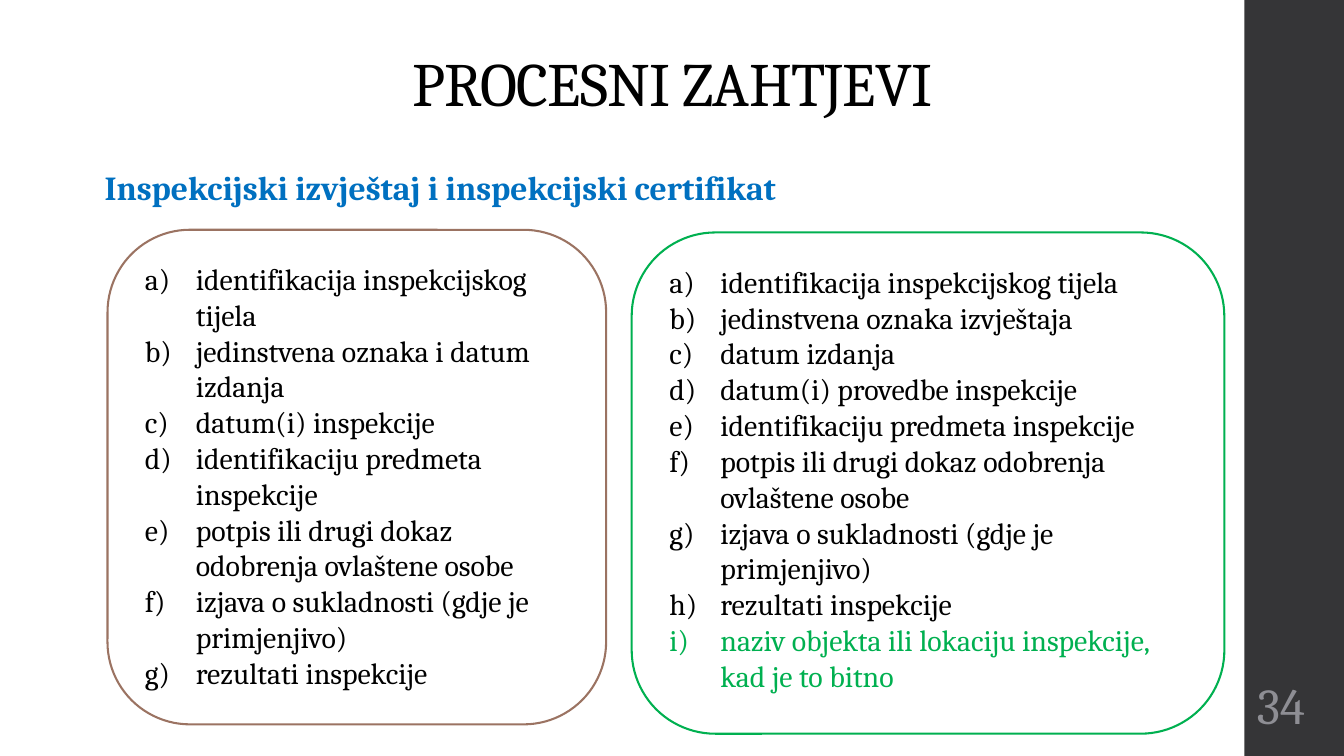
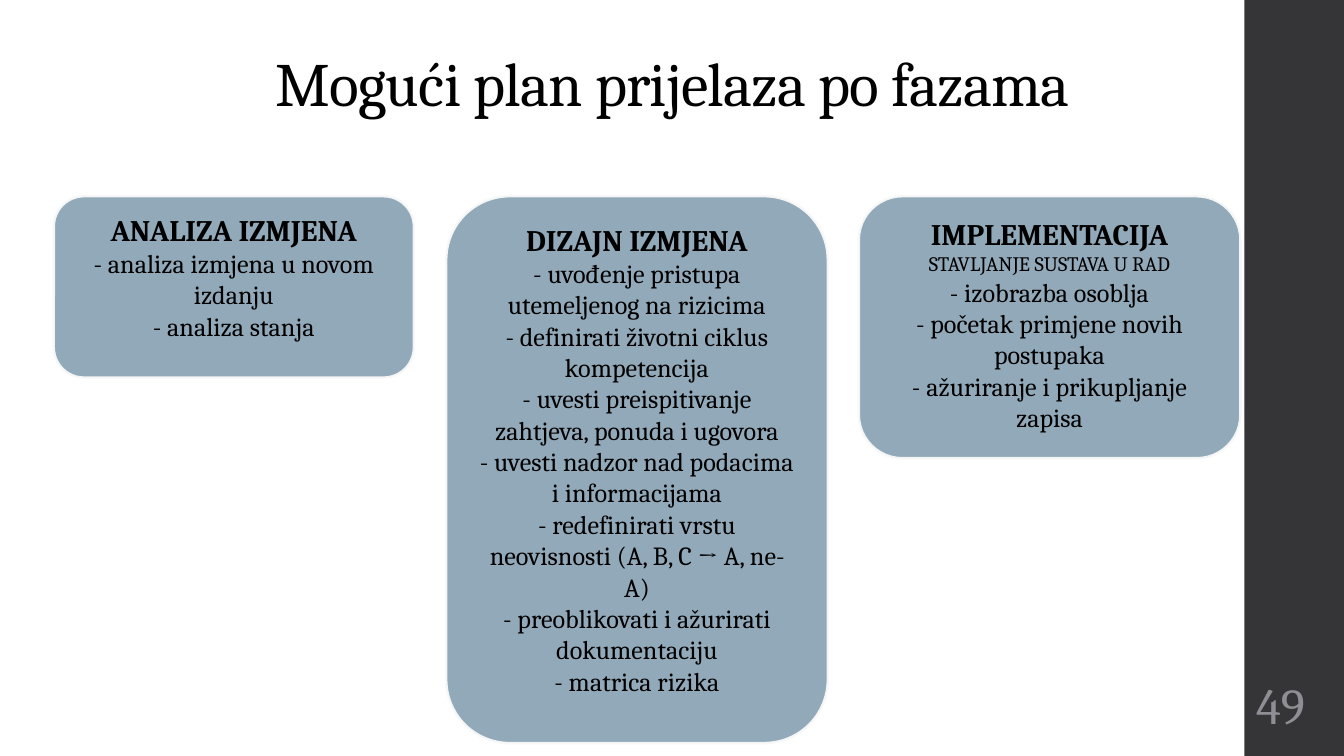
from dataclasses import dataclass

import lxml.etree
import pptx
import pptx.dml.color
import pptx.enum.shapes
import pptx.enum.text
import pptx.oxml.ns
import pptx.util

Inches = pptx.util.Inches
Pt = pptx.util.Pt
Align = pptx.enum.text.PP_ALIGN
Anchor = pptx.enum.text.MSO_ANCHOR
Preset = pptx.enum.shapes.MSO_SHAPE

FONT = "Cambria"
COLORS = {
    "white": "FFFFFF",
    "black": "000000",
    "band": "353537",
    "number": "8E8E94",
    "heading": "0070C0",
    "brown": "9B7362",
    "green": "00B050",
    "card": "92A9B9",
    "card_edge": "F9F9F9",
}


@dataclass(frozen=True)
class Line:
    text: str
    size: float
    color: str = "black"
    bold: bool = False


@dataclass(frozen=True)
class Box:
    left: float
    top: float
    width: float
    height: float


@dataclass(frozen=True)
class RequirementList:
    box: Box
    edge: str
    items: tuple[str, ...]
    added: tuple[str, ...] = ()


@dataclass(frozen=True)
class Phase:
    left: float
    width: float
    height: float
    title: str
    steps: tuple[str, ...]
    subtitle: str = ""


SLIDE_WIDTH = 10
SLIDE_HEIGHT = SLIDE_WIDTH * 9 / 16
TITLE = Box(1.14, 0.46, 7.73, 0.43)
BAND = Box(9.26, 0, 0.74, SLIDE_HEIGHT)
NUMBER = Box(9.11, 5.03, 0.6, 0.43)
HEADING = Box(0.68, 1.19, 7.73, 0.71)
PHASE_TOP = 1.46
LIST_INDENT = 0.38

REQUIREMENT_LISTS = (
    RequirementList(
        Box(0.8, 1.71, 3.71, 3.68),
        "brown",
        (
            "identifikacija inspekcijskog tijela",
            "jedinstvena oznaka i datum izdanja",
            "datum(i) inspekcije",
            "identifikaciju predmeta inspekcije",
            "potpis ili drugi dokaz odobrenja ovlaštene osobe",
            "izjava o sukladnosti (gdje je primjenjivo)",
            "rezultati inspekcije",
        ),
    ),
    RequirementList(
        Box(4.7, 1.73, 4.41, 3.73),
        "green",
        (
            "identifikacija inspekcijskog tijela",
            "jedinstvena oznaka izvještaja",
            "datum izdanja",
            "datum(i) provedbe inspekcije",
            "identifikaciju predmeta inspekcije",
            "potpis ili drugi dokaz odobrenja ovlaštene osobe",
            "izjava o sukladnosti (gdje je primjenjivo)",
            "rezultati inspekcije",
        ),
        ("naziv objekta ili lokaciju inspekcije, kad je to bitno",),
    ),
)

PHASES = (
    Phase(
        0.4, 2.68, 1.35,
        "ANALIZA IZMJENA",
        ("analiza izmjena u novom izdanju", "analiza stanja"),
    ),
    Phase(
        3.32, 2.84, 4.07,
        "DIZAJN IZMJENA",
        (
            "uvođenje pristupa utemeljenog na rizicima",
            "definirati životni ciklus kompetencija",
            "uvesti preispitivanje zahtjeva, ponuda i ugovora",
            "uvesti nadzor nad podacima i informacijama",
            "redefinirati vrstu neovisnosti (A, B, C → A, ne-A)",
            "preoblikovati i ažurirati dokumentaciju",
            "matrica rizika",
        ),
    ),
    Phase(
        6.39, 2.84, 1.95,
        "IMPLEMENTACIJA",
        (
            "izobrazba osoblja",
            "početak primjene novih postupaka",
            "ažuriranje i prikupljanje zapisa",
        ),
        "STAVLJANJE SUSTAVA U RAD",
    ),
)


def rgb(name: str) -> pptx.dml.color.RGBColor:
    return pptx.dml.color.RGBColor.from_string(COLORS[name])


def add_element(parent, tag: str, **attributes: str) -> None:
    lxml.etree.SubElement(parent, pptx.oxml.ns.qn(tag), **attributes)


def place(box: Box) -> tuple:
    return Inches(box.left), Inches(box.top), Inches(box.width), Inches(box.height)


def write_lines(shape, lines: list[Line], align: Align, anchor: Anchor = Anchor.TOP) -> None:
    frame = shape.text_frame
    frame.word_wrap = True
    frame.vertical_anchor = anchor
    frame.text = "\n".join(line.text for line in lines)
    for paragraph, line in zip(frame.paragraphs, lines):
        paragraph.alignment = align
        font = paragraph.runs[0].font
        font.name = FONT
        font.size = Pt(line.size)
        font.bold = line.bold
        font.color.rgb = rgb(line.color)


def add_text(slide, box: Box, line: Line, align: Align, anchor: Anchor, inset: bool = False):
    shape = slide.shapes.add_textbox(*place(box))
    write_lines(shape, [line], align, anchor)
    frame = shape.text_frame
    if not inset:
        frame.margin_left = frame.margin_right = frame.margin_top = frame.margin_bottom = 0
    return shape


def add_panel(slide, preset: Preset, box: Box, fill: str, edge: str = "", edge_width: float = 0):
    shape = slide.shapes.add_shape(preset, *place(box))
    shape.shadow.inherit = False
    shape.fill.solid()
    shape.fill.fore_color.rgb = rgb(fill)
    if edge:
        shape.line.color.rgb = rgb(edge)
        shape.line.width = Pt(edge_width)
    else:
        shape.line.fill.background()
    return shape


def add_base_slide(presentation, title: str, number: int):
    slide = presentation.slides.add_slide(presentation.slide_layouts[6])
    slide.background.fill.solid()
    slide.background.fill.fore_color.rgb = rgb("white")
    add_panel(slide, Preset.RECTANGLE, BAND, "band")
    title_shape = add_text(slide, TITLE, Line(title, 33), Align.CENTER, Anchor.BOTTOM)
    paragraph = title_shape.text_frame.paragraphs[0]
    paragraph.line_spacing = 0.9
    paragraph.runs[0].font._element.set("spc", "-40")
    add_text(slide, NUMBER, Line(str(number), 27, "number"), Align.RIGHT, Anchor.MIDDLE)
    return slide


def add_requirement_list(slide, requirements: RequirementList) -> None:
    shape = add_panel(
        slide, Preset.ROUNDED_RECTANGLE, requirements.box, "white", requirements.edge, 1.1
    )
    lines = [Line(item, 16) for item in requirements.items]
    lines += [Line(item, 16, "green") for item in requirements.added]
    write_lines(shape, lines, Align.LEFT)
    for paragraph in shape.text_frame.paragraphs:
        properties = paragraph._p.get_or_add_pPr()
        properties.set("marL", str(Inches(LIST_INDENT)))
        properties.set("indent", str(-Inches(LIST_INDENT)))
        add_element(properties, "a:buFont", typeface=FONT)
        add_element(properties, "a:buAutoNum", type="alphaLcParenR")


def add_phase(slide, phase: Phase) -> None:
    box = Box(phase.left, PHASE_TOP, phase.width, phase.height)
    shape = add_panel(slide, Preset.ROUNDED_RECTANGLE, box, "card", "card_edge", 1.35)
    edge_color = shape.line._ln.find(".//" + pptx.oxml.ns.qn("a:srgbClr"))
    add_element(edge_color, "a:alpha", val="95000")
    lines = [Line(phase.title, 16, bold=True)]
    if phase.subtitle:
        lines.append(Line(phase.subtitle, 11))
    lines += [Line(f"- {step}", 14) for step in phase.steps]
    write_lines(shape, lines, Align.CENTER)


def add_requirements_slide(presentation) -> None:
    slide = add_base_slide(presentation, "PROCESNI ZAHTJEVI", 34)
    heading = Line("Inspekcijski izvještaj i inspekcijski certifikat", 18, "heading", True)
    shape = add_text(slide, HEADING, heading, Align.JUSTIFY, Anchor.TOP, inset=True)
    shape.text_frame.auto_size = pptx.enum.text.MSO_AUTO_SIZE.SHAPE_TO_FIT_TEXT
    for requirements in REQUIREMENT_LISTS:
        add_requirement_list(slide, requirements)


def add_phases_slide(presentation) -> None:
    slide = add_base_slide(presentation, "Mogući plan prijelaza po fazama", 49)
    for phase in PHASES:
        add_phase(slide, phase)


def main() -> None:
    presentation = pptx.Presentation()
    presentation.slide_width = Inches(SLIDE_WIDTH)
    presentation.slide_height = Inches(SLIDE_HEIGHT)
    add_requirements_slide(presentation)
    add_phases_slide(presentation)
    presentation.save("out.pptx")


if __name__ == "__main__":
    main()
